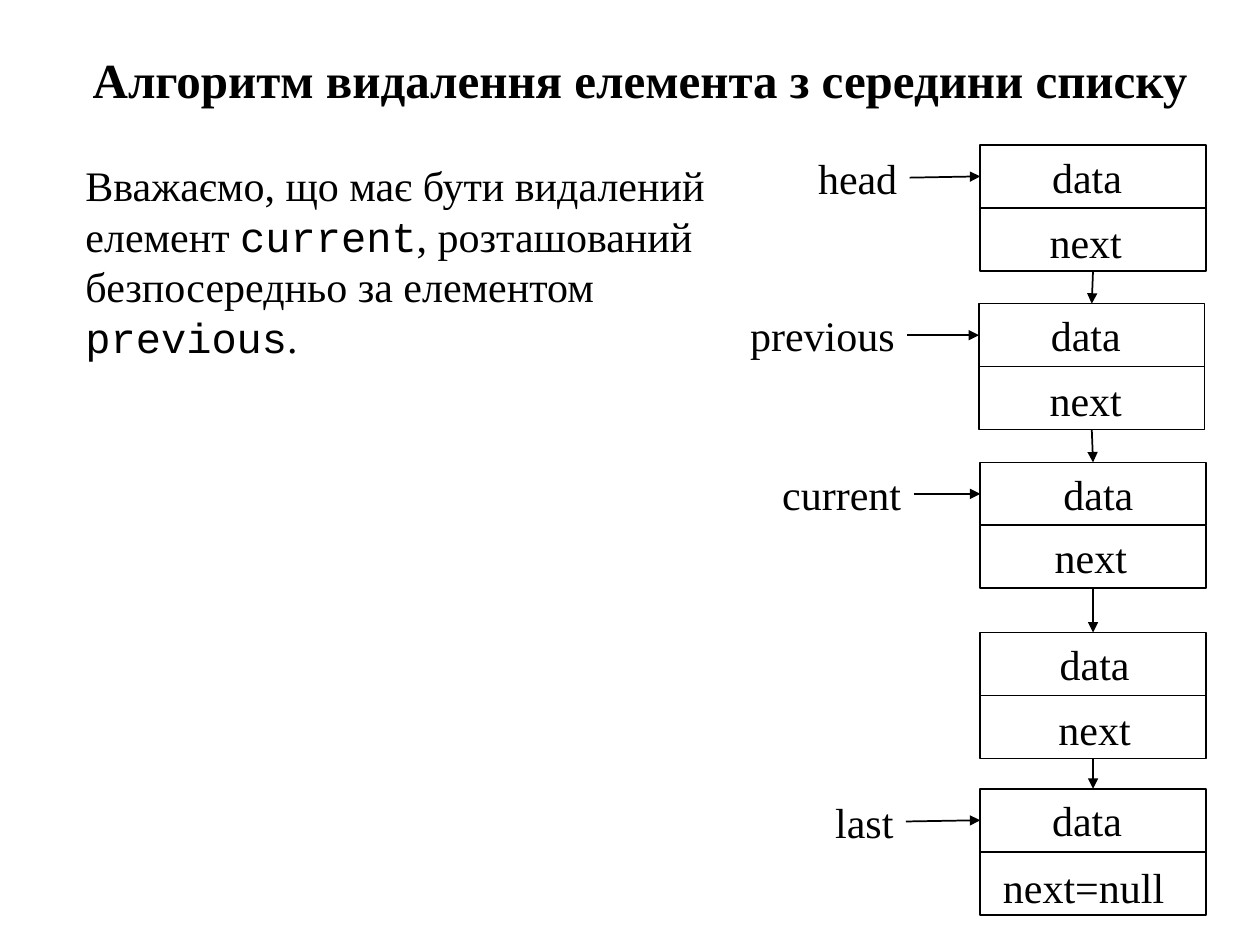
import pptx
import pptx.dml.color
import pptx.enum.shapes
import pptx.enum.text
import pptx.oxml
import pptx.oxml.ns
import pptx.util
from pptx.util import Inches

BLACK = "000000"
SERIF, MONO = "Times New Roman", "Courier New"
ALIGN = pptx.enum.text.PP_ALIGN
ANCHOR = pptx.enum.text.MSO_ANCHOR
AUTO_SIZE = pptx.enum.text.MSO_AUTO_SIZE


def color(value):
    return pptx.dml.color.RGBColor.from_string(value)


def write(shape, runs, size=24, bold=False, align=ALIGN.LEFT, **frame_format):
    """Fill a shape with one paragraph of (text, font name) runs."""
    for name, value in frame_format.items():
        setattr(shape.text_frame, name, value)
    paragraph = shape.text_frame.paragraphs[0]
    paragraph.alignment = align
    for text, font_name in runs:
        run = paragraph.add_run()
        run.text = text
        font_format = {"name": font_name, "size": pptx.util.Pt(size), "bold": bold}
        for name, value in font_format.items():
            setattr(run.font, name, value)
        run.font.color.rgb = color(BLACK)


presentation = pptx.Presentation()
presentation.slide_width, presentation.slide_height = Inches(10), Inches(7.5)
slide = presentation.slides.add_slide(presentation.slide_layouts[5])

# Title
title = slide.shapes.title
title.left, title.top = Inches(0.33), Inches(0.25)
title.width, title.height = Inches(9.5), Inches(0.75)
write(title, [("Алгоритм видалення елемента з середини списку", SERIF)],
      size=28, bold=True, align=ALIGN.CENTER, vertical_anchor=ANCHOR.MIDDLE,
      word_wrap=True, auto_size=AUTO_SIZE.NONE)

# Explanation
explanation = slide.shapes.add_textbox(
    Inches(0.58), Inches(1.22), Inches(5.28), Inches(1.72))
write(explanation, [
    ("Вважаємо, що має бути видалений елемент ", SERIF),
    ("current", MONO),
    (", розташований безпосередньо за елементом ", SERIF),
    ("previous", MONO),
    (".", SERIF),
], word_wrap=True, auto_size=AUTO_SIZE.SHAPE_TO_FIT_TEXT)

# List nodes: left, top, then (text, left inset, top inset) of both fields
CELL_WIDTH, CELL_HEIGHT = 1.79, 0.5
nodes = [
    (7.78, 1.15, ("data", 0.57, 0.05), ("next", 0.55, 0.07)),
    (7.77, 2.41, ("data", 0.57, 0.05), ("next", 0.56, 0.06)),
    (7.78, 3.67, ("data", 0.66, 0.05), ("next", 0.59, 0.05)),
    (7.78, 5.02, ("data", 0.63, 0.05), ("next", 0.62, 0.06)),
    (7.78, 6.26, ("data", 0.57, 0.05), ("next=null", 0.18, 0.08)),
]
node_cells = []
for left, top, *fields in nodes:
    cells = []
    for row, (text, inset_left, inset_top) in enumerate(fields):
        cell = slide.shapes.add_shape(
            pptx.enum.shapes.MSO_SHAPE.RECTANGLE, Inches(left),
            Inches(top + row * CELL_HEIGHT), Inches(CELL_WIDTH), Inches(CELL_HEIGHT))
        cell.shadow.inherit = False
        cell.fill.background()
        cell.line.color.rgb = color(BLACK)
        cell.line.width = pptx.util.Pt(1)
        write(cell, [(text, SERIF)], vertical_anchor=ANCHOR.TOP, word_wrap=False,
              margin_left=Inches(inset_left), margin_top=Inches(inset_top),
              margin_right=0, margin_bottom=0)
        cells.append(cell)
    node_cells.append(cells)

# Links: start shape, its side, end shape, its side
links = [(upper[1], 2, lower[0], 0)
         for upper, lower in zip(node_cells, node_cells[1:])]

# Pointer labels: node index, text, left, top, width
labels = [
    (0, "head", 6.39, 1.16, 0.83),
    (1, "previous", 5.84, 2.41, 1.36),
    (2, "current", 6.1, 3.67, 1.15),
    (4, "last", 6.52, 6.27, 0.67),
]
for node_index, text, left, top, width in labels:
    label = slide.shapes.add_textbox(
        Inches(left), Inches(top), Inches(width), Inches(CELL_HEIGHT))
    write(label, [(text, SERIF)], align=ALIGN.RIGHT, word_wrap=False)
    links.append((label, 3, node_cells[node_index][0], 1))

# Arrows
for start, start_side, end, end_side in links:
    arrow = slide.shapes.add_connector(
        pptx.enum.shapes.MSO_CONNECTOR.STRAIGHT, 0, 0, 0, 0)
    arrow.begin_connect(start, start_side)
    arrow.end_connect(end, end_side)
    arrow.line.color.rgb = color(BLACK)
    arrow.line.width = pptx.util.Pt(1)
    head = pptx.oxml.parse_xml(
        f'<a:tailEnd {pptx.oxml.ns.nsdecls("a")} type="triangle"/>')
    arrow.line._get_or_add_ln().append(head)
    arrow._element.spPr.append(
        pptx.oxml.parse_xml(f'<a:effectLst {pptx.oxml.ns.nsdecls("a")}/>'))

presentation.save("out.pptx")
